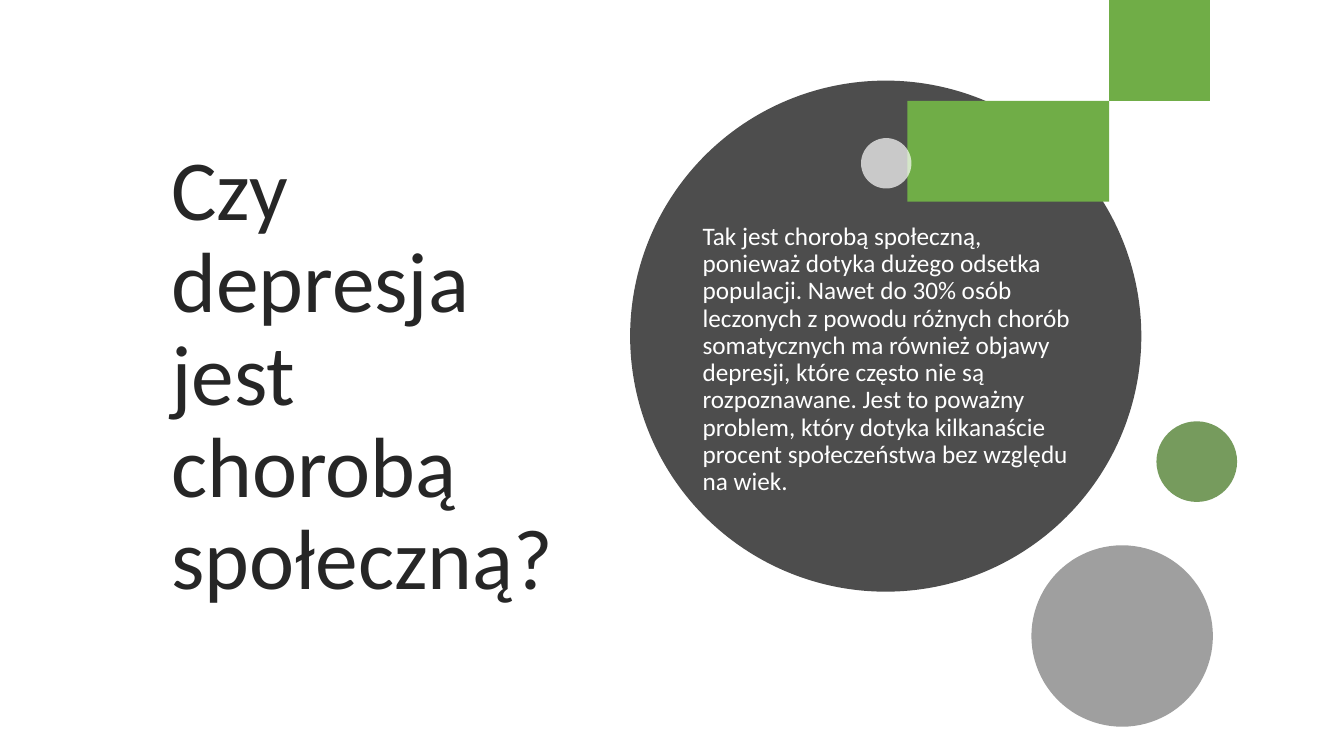
"""Build a slide on depression as a social illness, with circles and a sweeping arc."""
from typing import NamedTuple

from pptx import Presentation
from pptx import util as u
from pptx.dml import color
from pptx.enum import shapes, text
from pptx.oxml import ns
from lxml import etree

COLORS = {
    "title": "262626", "body": "FFFFFF", "disc": "4D4D4D", "dot": "FFFFFF",
    "arc": "70AD47", "leaf": "548235", "ash": "404040",
}
Point = tuple[float, float]


class Circle(NamedTuple):
    left: float
    top: float
    size: float
    color: str
    opacity: int = 100


DISC = Circle(6.25, 0.8, 5.07, "disc")
BUBBLES = [
    Circle(8.54, 1.37, 0.5, "dot", 70),
    Circle(11.47, 4.18, 0.8, "leaf", 80),
    Circle(10.23, 5.41, 1.8, "ash", 50),
]


def paint(shape, color_name: str, opacity: int = 100) -> None:
    shape.shadow.inherit = False
    shape.line.fill.background()
    shape.fill.solid()
    shape.fill.fore_color.rgb = color.RGBColor.from_string(COLORS[color_name])
    if opacity < 100:
        tint = shape.fill._xPr.find(".//" + ns.qn("a:srgbClr"))
        etree.SubElement(tint, ns.qn("a:alpha"), val=str(opacity * 1000))


def draw_circle(slide, circle: Circle) -> None:
    size = u.Inches(circle.size)
    disc = slide.shapes.add_shape(
        shapes.MSO_SHAPE.OVAL, u.Inches(circle.left), u.Inches(circle.top), size, size)
    paint(disc, circle.color, circle.opacity)


def curve(start: Point, pull: Point, push: Point, end: Point, steps: int = 24) -> list[Point]:
    points = []
    for step in range(steps + 1):
        t = step / steps
        weights = ((1 - t) ** 3, 3 * t * (1 - t) ** 2, 3 * t * t * (1 - t), t ** 3)
        x, y = (sum(w * c for w, c in zip(weights, axis))
                for axis in zip(start, pull, push, end))
        points.append((x, y))
    return points


def draw_arc(slide) -> None:
    outer = curve((11.7, 0.05), (11.41, 1.06), (10.5, 1.81), (9.4, 1.87))
    inner = curve((9.48, 1.34), (10.19, 1.27), (10.79, 0.83), (11.09, 0.21))
    outline = [(11.71, 0), *outer, (9.27, 1.87), (9.27, 1.35), *inner]
    builder = slide.shapes.build_freeform(11.17, 0, scale=u.Inches(1))
    builder.add_line_segments(outline, close=True)
    paint(builder.convert_to_shape(), "arc")


def add_text(slide, words: str, *, left: float, top: float, width: float, height: float,
             size: float, color_name: str, before: float = 0, bottom: float = 0.05) -> None:
    box = slide.shapes.add_textbox(*map(u.Inches, (left, top, width, height)))
    frame = box.text_frame
    frame.word_wrap = True
    frame.vertical_anchor = text.MSO_ANCHOR.MIDDLE
    frame.margin_bottom = u.Inches(bottom)
    paragraph = frame.paragraphs[0]
    paragraph.line_spacing = 0.9
    paragraph.space_before = u.Pt(before)
    run = paragraph.add_run()
    run.text = words
    run.font.name = "Calibri"
    run.font.size = u.Pt(size)
    run.font.color.rgb = color.RGBColor.from_string(COLORS[color_name])


def main() -> None:
    deck = Presentation()
    deck.slide_width, deck.slide_height = u.Inches(13.33), u.Inches(7.5)
    slide = deck.slides.add_slide(deck.slide_layouts[6])
    add_text(slide, "Czy depresja jest chorobą społeczną?", left=1.6, top=1.19,
             width=4.16, height=5.11, size=61, color_name="title")
    draw_circle(slide, DISC)
    draw_arc(slide)
    for bubble in BUBBLES:
        draw_circle(slide, bubble)
    add_text(
        slide,
        "Tak jest chorobą społeczną, ponieważ dotyka dużego odsetka populacji. "
        "Nawet do 30% osób leczonych z powodu różnych chorób somatycznych ma również "
        "objawy depresji, które często nie są rozpoznawane. Jest to poważny problem, "
        "który dotyka kilkanaście procent społeczeństwa bez względu na wiek.",
        left=6.87, top=1.93, width=3.92, height=3.65, size=18, color_name="body",
        before=10, bottom=0.42)
    deck.save("out.pptx")


if __name__ == "__main__":
    main()
